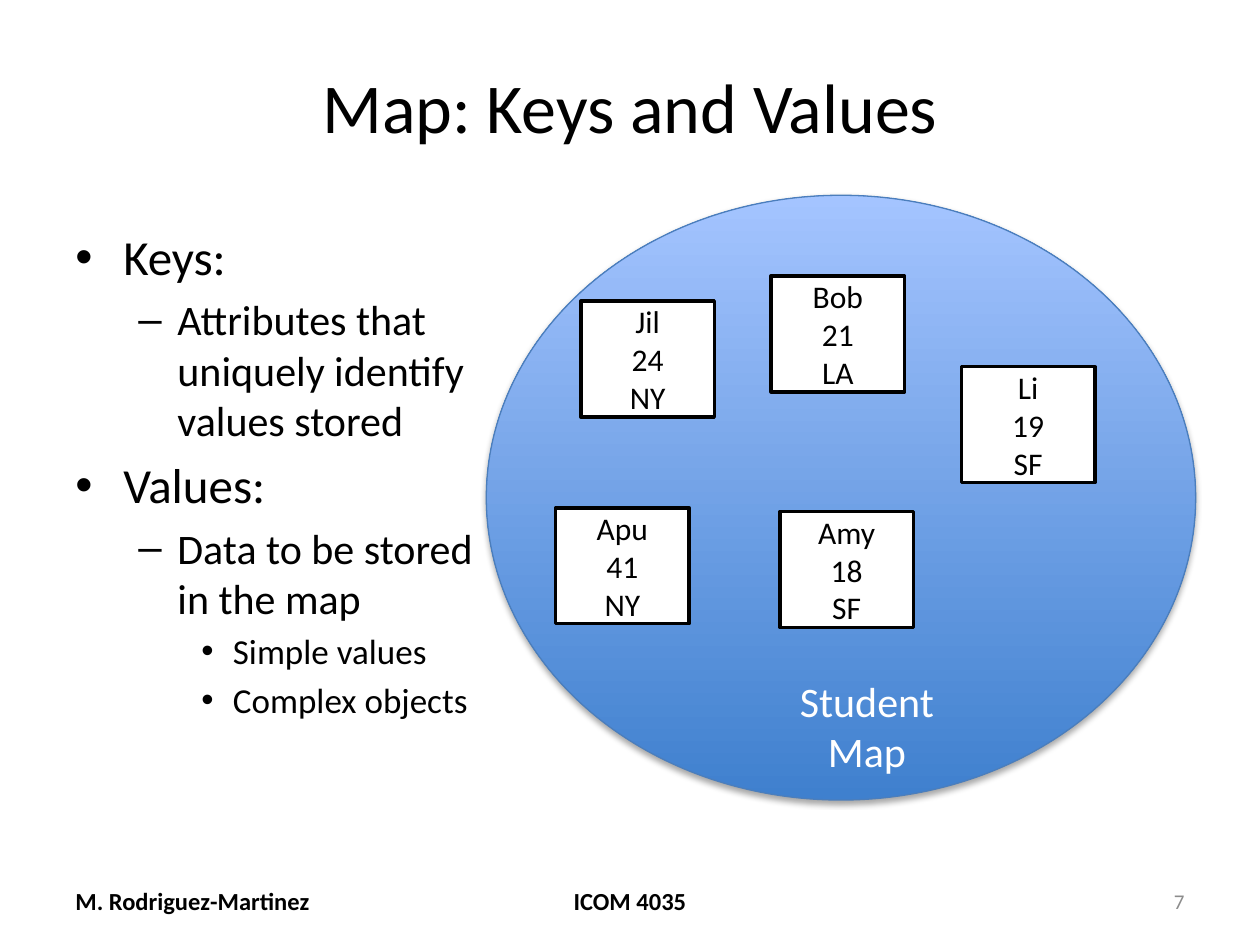
from lxml.etree import SubElement
from pptx import Presentation
from pptx.dml.color import RGBColor
from pptx.enum.shapes import MSO_SHAPE
from pptx.enum.text import MSO_ANCHOR, PP_ALIGN
from pptx.oxml.ns import qn
from pptx.util import Inches, Pt

FONT = "Calibri"
LEVELS = [
    (28, "•", 0.38, 0.38),
    (24, "–", 0.81, 0.31),
    (20, "•", 1.25, 0.25),
]
OUTLINE = [
    (0, "Keys:"),
    (1, "Attributes that uniquely identify values stored"),
    (0, "Values:"),
    (1, "Data to be stored in the map"),
    (2, "Simple values"),
    (2, "Complex objects"),
]
STUDENTS = [
    (0.75, 0.84, ("Jil", "24", "NY")),
    (2.26, 0.64, ("Bob", "21", "LA")),
    (0.55, 2.48, ("Apu", "41", "NY")),
    (2.33, 2.51, ("Amy", "18", "SF")),
    (3.77, 1.36, ("Li", "19", "SF")),
]


def color(value):
    return RGBColor.from_string(value)


def style(paragraph, size, ink="000000", align=PP_ALIGN.LEFT, bold=False):
    paragraph.alignment = align
    paragraph.font.name = FONT
    paragraph.font.size = Pt(size)
    paragraph.font.bold = bold
    paragraph.font.color.rgb = color(ink)


def fill_text(frame, lines, size, anchor=MSO_ANCHOR.MIDDLE, **options):
    frame.word_wrap = True
    frame.vertical_anchor = anchor
    for index, line in enumerate(lines):
        paragraph = frame.add_paragraph() if index else frame.paragraphs[0]
        paragraph.text = line
        style(paragraph, size, **options)


def add_text(slide, box, lines, size, **options):
    shape = slide.shapes.add_textbox(*map(Inches, box))
    fill_text(shape.text_frame, lines, size, **options)
    return shape


def add_outline(slide, box):
    shape = add_text(slide, box, [text for _, text in OUTLINE], 28,
                     anchor=MSO_ANCHOR.TOP)
    for paragraph, (level, _) in zip(shape.text_frame.paragraphs, OUTLINE):
        size, bullet, margin, hanging = LEVELS[level]
        paragraph.level = level
        paragraph.font.size = Pt(size)
        paragraph.space_before = Pt(size * 0.2)
        properties = paragraph._p.get_or_add_pPr()
        properties.set("marL", str(Inches(margin)))
        properties.set("indent", str(-Inches(hanging)))
        SubElement(properties, qn("a:buFont"), typeface="Arial")
        SubElement(properties, qn("a:buChar"), char=bullet)


def add_soft_shadow(shape):
    shape.shadow.inherit = False
    effects = shape._element.spPr.find(qn("a:effectLst"))
    shadow = SubElement(effects, qn("a:outerShdw"), blurRad=str(Pt(3.1)),
                        dist=str(Pt(1.8)), dir="5400000", rotWithShape="0")
    ink = SubElement(shadow, qn("a:srgbClr"), val="000000")
    SubElement(ink, qn("a:alpha"), val="35000")


def add_record(slide, box, lines):
    shape = slide.shapes.add_shape(MSO_SHAPE.RECTANGLE, *map(Inches, box))
    shape.shadow.inherit = False
    shape.fill.solid()
    shape.fill.fore_color.rgb = color("FFFFFF")
    shape.line.color.rgb = color("000000")
    shape.line.width = Pt(2)
    fill_text(shape.text_frame, lines, 18, align=PP_ALIGN.CENTER)


def add_student_map(slide, box):
    left, top, width, height = box
    ellipse = slide.shapes.add_shape(MSO_SHAPE.OVAL, *map(Inches, box))
    ellipse.fill.gradient()
    ellipse.fill.gradient_angle = 90
    for stop, shade in zip(ellipse.fill.gradient_stops, ("3F80CE", "A4C4FF")):
        stop.color.rgb = color(shade)
    ellipse.line.color.rgb = color("4B7EBC")
    ellipse.line.width = Pt(0.75)
    add_soft_shadow(ellipse)
    for across, down, lines in STUDENTS:
        add_record(slide, (left + across, top + down, 1.06, 0.92), lines)
    add_text(slide, (left + 2.11, top + 3.76, 1.82, 0.91), ["Student Map"], 24,
             anchor=MSO_ANCHOR.TOP, ink="FFFFFF", align=PP_ALIGN.CENTER)


def add_footer(slide, box):
    left, top, width, height = box
    side, middle = 2.33, 3.17
    add_text(slide, (left, top, side, height), ["M. Rodriguez-Martinez"], 14,
             bold=True)
    add_text(slide, (left + (width - middle) / 2, top, middle, height),
             ["ICOM 4035"], 14, bold=True, align=PP_ALIGN.CENTER)
    add_text(slide, (left + width - side, top, side, height), ["7"], 12,
             ink="8C8C8C", align=PP_ALIGN.RIGHT)


def main():
    presentation = Presentation()
    presentation.slide_width = Inches(10)
    presentation.slide_height = Inches(7.5)
    slide = presentation.slides.add_slide(presentation.slide_layouts[6])
    add_text(slide, (0.5, 0.3, 9, 1.07), ["Map: Keys and Values"], 40,
             align=PP_ALIGN.CENTER)
    add_outline(slide, (0.5, 1.75, 3.41, 4.95))
    add_footer(slide, (0.5, 6.95, 9, 0.4))
    add_student_map(slide, (3.86, 1.55, 5.63, 4.8))
    presentation.save("out.pptx")


if __name__ == "__main__":
    main()
